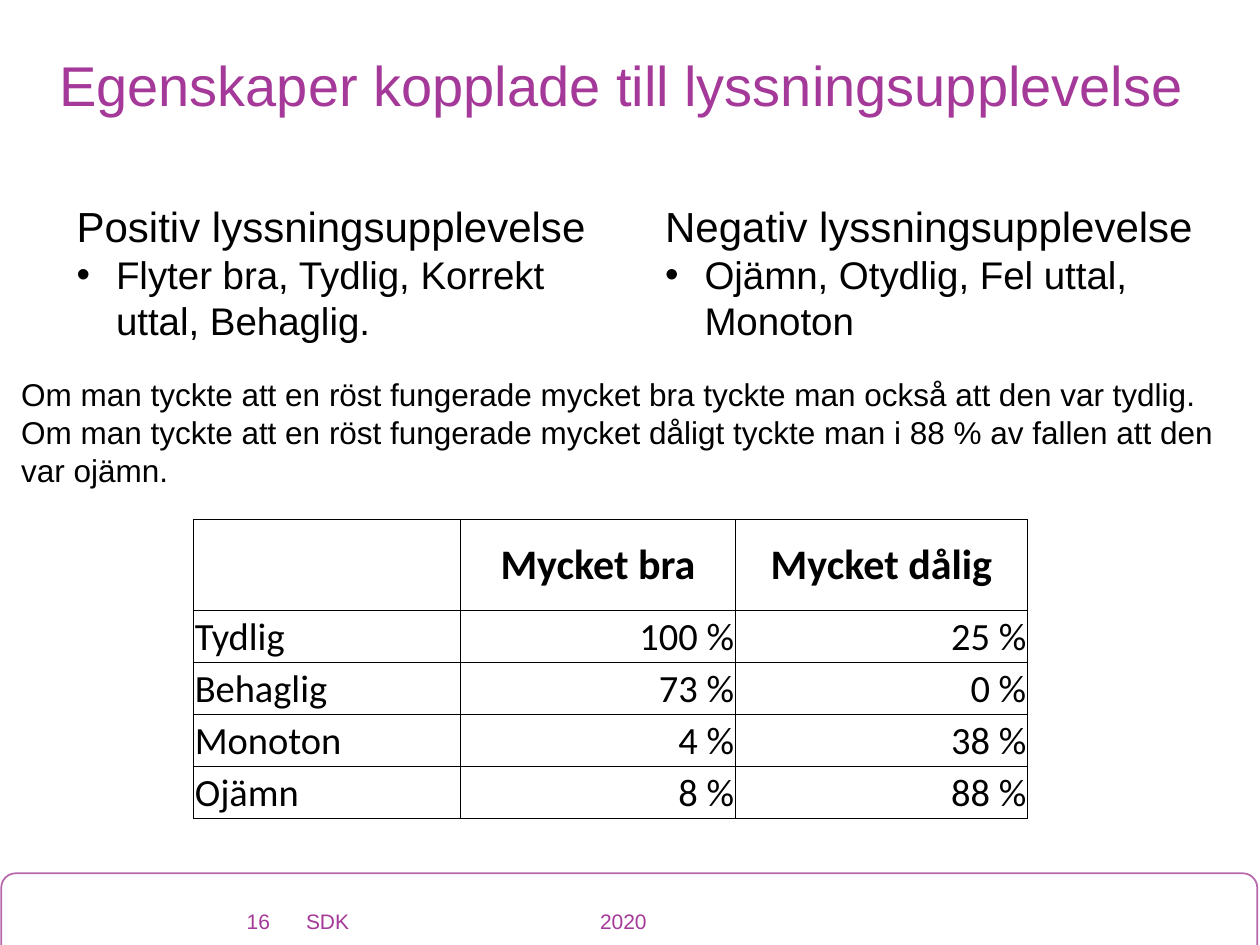
"""Build the slide on voice qualities linked to the listening experience."""
from typing import NamedTuple

from lxml import etree
from pptx import Presentation
from pptx.dml.color import RGBColor
from pptx.enum import shapes, text
from pptx.oxml import ns
from pptx.util import Pt

PURPLE = RGBColor(0xA5, 0x39, 0x99)
LILAC = RGBColor(0xB7, 0x68, 0xAD)
BLACK = RGBColor(0, 0, 0)
LEFT, CENTER, RIGHT = text.PP_ALIGN.LEFT, text.PP_ALIGN.CENTER, text.PP_ALIGN.RIGHT
TOP, MIDDLE = text.MSO_ANCHOR.TOP, text.MSO_ANCHOR.MIDDLE


class Box(NamedTuple):
    x: float
    y: float
    w: float
    h: float


class Para(NamedTuple):
    words: str
    size: float
    color: RGBColor = BLACK
    align: text.PP_ALIGN = LEFT
    font: str = "Arial"
    bold: bool = False
    bullet: bool = False
    tab: float = 0


class Block(NamedTuple):
    box: Box
    paras: list[Para]
    anchor: text.MSO_ANCHOR = TOP


BLOCKS = [
    Block(Box(167.8, 511.9, 419.8, 28.8), [Para("SDK\t2020", 12, PURPLE, tab=168)], MIDDLE),
    Block(Box(130.3, 511.9, 34.6, 28.8), [Para("16", 12, PURPLE, CENTER)], MIDDLE),
    Block(Box(36.7, 110.9, 318.2, 90), [
        Para("Positiv lyssningsupplevelse", 24),
        Para("Flyter bra, Tydlig, Korrekt uttal, Behaglig.", 22, bullet=True)]),
    Block(Box(373, 110.9, 321.1, 90), [
        Para("Negativ lyssningsupplevelse", 24),
        Para("Ojämn, Otydlig, Fel uttal, Monoton", 22, bullet=True)]),
    Block(Box(5, 211, 699.8, 72.7), [
        Para("Om man tyckte att en röst fungerade mycket bra tyckte man också "
             "att den var tydlig.", 18),
        Para("Om man tyckte att en röst fungerade mycket dåligt tyckte man i 88 % "
             "av fallen att den var ojämn.", 18)]),
]
TABLE = Box(110.6, 297, 476.6, 170.6)
COLUMNS = [152.6, 157, 167]
ROWS = [51.8, 29.7, 29.7, 29.7, 29.7]
CELLS = [
    ["", "Mycket bra", "Mycket dålig"],
    ["Tydlig", "100 %", "25 %"],
    ["Behaglig", "73 %", "0 %"],
    ["Monoton", "4 %", "38 %"],
    ["Ojämn", "8 %", "88 %"],
]


def add_element(parent, tag: str, **attrs: str):
    return etree.SubElement(parent, ns.qn(tag), attrs)


def write(tf, paras: list[Para]) -> None:
    for i, para in enumerate(paras):
        p = tf.add_paragraph() if i else tf.paragraphs[0]
        p.alignment = para.align
        ppr = p._p.get_or_add_pPr()
        if para.bullet:
            ppr.set("marL", str(Pt(22.5)))
            ppr.set("indent", str(-Pt(22.5)))
            add_element(ppr, "a:buFont", typeface="Arial")
            add_element(ppr, "a:buChar", char="•")
        if para.tab:
            tabs = add_element(ppr, "a:tabLst")
            add_element(tabs, "a:tab", pos=str(Pt(para.tab)), algn="l")
        r = p.add_run()
        r.text = para.words
        r.font.name, r.font.size, r.font.bold = para.font, Pt(para.size), para.bold
        r.font.color.rgb = para.color


def add_block(s, block: Block) -> None:
    tf = s.shapes.add_textbox(*map(Pt, block.box)).text_frame
    tf.word_wrap = True
    tf.vertical_anchor = block.anchor
    write(tf, block.paras)


def add_title(s, words: str) -> None:
    sp = s.shapes.title
    sp.left, sp.top, sp.width, sp.height = map(Pt, Box(26.6, 29.5, 684, 56.2))
    tf = sp.text_frame
    tf.auto_size = text.MSO_AUTO_SIZE.NONE
    tf.vertical_anchor = TOP
    write(tf, [Para(words, 32, PURPLE)])
    tf.paragraphs[0].line_spacing = 0.9


def add_frame(s) -> None:
    sp = s.shapes.add_shape(shapes.MSO_SHAPE.ROUNDED_RECTANGLE,
                            *map(Pt, Box(0.7, 499, 717.8, 49.7)))
    sp.shadow.inherit = False
    sp.fill.background()
    sp.line.color.rgb = LILAC
    sp.line.width = Pt(1)


def format_cell(cell) -> None:
    cell.margin_left = cell.margin_right = cell.margin_top = Pt(0.75)
    cell.margin_bottom = Pt(0)
    cell.vertical_anchor = MIDDLE
    for side in "LRTB":
        ln = add_element(cell._tc.get_or_add_tcPr(), f"a:ln{side}", w=str(Pt(0.5)))
        add_element(add_element(ln, "a:solidFill"), "a:srgbClr", val=str(BLACK))
    cell.fill.background()


def add_results(s) -> None:
    table = s.shapes.add_table(len(ROWS), len(COLUMNS), *map(Pt, TABLE)).table
    table.first_row = table.horz_banding = False
    for column, width in zip(table.columns, COLUMNS):
        column.width = Pt(width)
    for i, (row, height) in enumerate(zip(table.rows, ROWS)):
        row.height = Pt(height)
        for j, (cell, words) in enumerate(zip(row.cells, CELLS[i])):
            format_cell(cell)
            if words:
                align = CENTER if i == 0 else RIGHT if j else LEFT
                size = 22 if i else 24
                write(cell.text_frame,
                      [Para(words, size, align=align, font="Calibri", bold=i == 0)])


def main() -> None:
    prs = Presentation()
    prs.slide_width, prs.slide_height = Pt(720), Pt(540)
    s = prs.slides.add_slide(prs.slide_layouts[5])
    add_frame(s)
    add_title(s, "Egenskaper kopplade till lyssningsupplevelse")
    for block in BLOCKS:
        add_block(s, block)
    add_results(s)
    prs.save("out.pptx")


if __name__ == "__main__":
    main()
